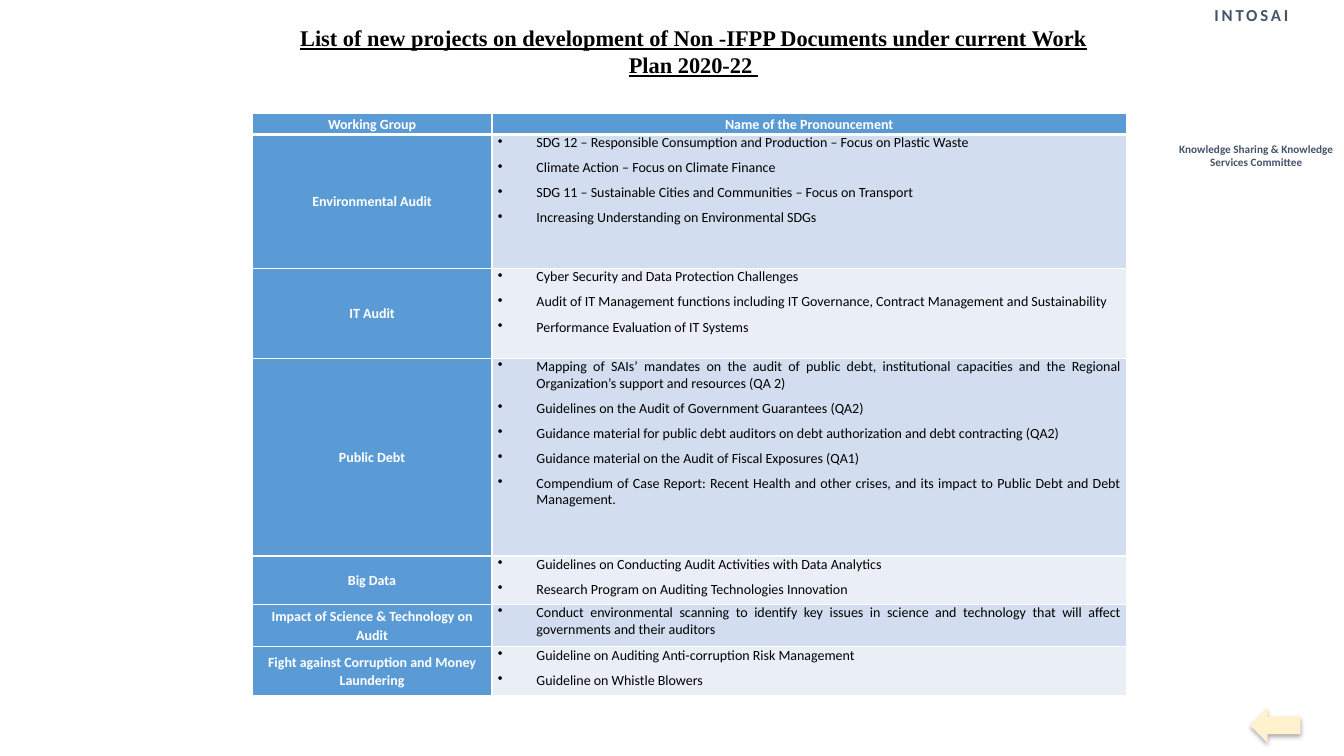
"""Build the slide that lists new projects by working group."""
from dataclasses import dataclass

from pptx import Presentation
from pptx.dml.color import RGBColor
from pptx.enum.shapes import MSO_SHAPE
from pptx.enum.text import MSO_ANCHOR, PP_ALIGN
from pptx.oxml import parse_xml
from pptx.oxml.ns import nsdecls
from pptx.slide import Slide
from pptx.table import _Cell
from pptx.text.text import TextFrame, _Paragraph
from pptx.util import Cm, Pt

ARROW = MSO_SHAPE.LEFT_ARROW
MIDDLE, TOP = MSO_ANCHOR.MIDDLE, MSO_ANCHOR.TOP
CENTER, JUSTIFY = PP_ALIGN.CENTER, PP_ALIGN.JUSTIFY
COLORS = {
    "head": "5B9BD5", "dark": "D2DEEF", "light": "EAEFF7", "white": "FFFFFF",
    "black": "000000", "slate": "44546A", "cream": "FFF2CC",
}
HEADS = ("Working Group", "Name of the Pronouncement")
WIDTHS = (6.05, 15.98)
HEAD_HEIGHT = 0.53


@dataclass
class Group:
    """A working group, its row height in cm and its projects."""
    name: str
    height: float
    items: tuple[str, ...]


@dataclass
class Label:
    """A text box of the page frame, with lengths in cm."""
    text: str
    left: float
    top: float
    width: float
    height: float
    size: int
    spread: int


GROUPS = (
    Group("Environmental Audit", 3.38, (
        "SDG 12 – Responsible Consumption and Production – Focus on Plastic Waste",
        "Climate Action – Focus on Climate Finance",
        "SDG 11 – Sustainable Cities and Communities – Focus on Transport",
        "Increasing Understanding on Environmental SDGs",
    )),
    Group("IT Audit", 2.26, (
        "Cyber Security and Data Protection Challenges",
        "Audit of IT Management functions including IT Governance, "
        "Contract Management and Sustainability",
        "Performance Evaluation of IT Systems",
    )),
    Group("Public Debt", 4.98, (
        "Mapping of SAIs’ mandates on the audit of public debt, institutional "
        "capacities and the Regional Organization’s support and resources (QA 2)",
        "Guidelines on the Audit of Government Guarantees (QA2)",
        "Guidance material for public debt auditors on debt authorization "
        "and debt contracting (QA2)",
        "Guidance material on the Audit of Fiscal Exposures (QA1)",
        "Compendium of Case Report: Recent Health and other crises, "
        "and its impact to Public Debt and Debt Management.",
    )),
    Group("Big Data", 1.22, (
        "Guidelines on Conducting Audit Activities with Data Analytics",
        "Research Program on Auditing Technologies Innovation",
    )),
    Group("Impact of Science & Technology on Audit", 1.07, (
        "Conduct environmental scanning to identify key issues in science and "
        "technology that will affect governments and their auditors",
    )),
    Group("Fight against Corruption and Money Laundering", 1.22, (
        "Guideline on Auditing Anti-corruption Risk Management",
        "Guideline on Whistle Blowers",
    )),
)
LABELS = (
    Label("INTOSAI", 29.51, 0, 4.06, 0.76, 12, 200),
    Label("Knowledge Sharing & Knowledge Services Committee",
          29.03, 3.45, 5.26, 0.94, 8, 0),
)


def style(para: _Paragraph, size: int, color: str, bold: bool = True,
          face: str = "Calibri") -> None:
    """Set the font of a paragraph."""
    font = para.font
    font.name, font.size, font.bold = face, Pt(size), bold
    font.color.rgb = RGBColor.from_string(COLORS[color])


def add_title(slide: Slide) -> None:
    """Place and format the title."""
    title = slide.shapes.title
    title.left, title.top = Cm(7.29), Cm(0.48)
    title.width, title.height = Cm(20.37), Cm(2.39)
    frame = title.text_frame
    frame.text = ("List of new projects on development of Non -IFPP Documents "
                  "under current Work Plan 2020-22 ")
    frame.word_wrap, frame.vertical_anchor = True, TOP
    para = frame.paragraphs[0]
    para.alignment = CENTER
    style(para, 16, "black", face="Times New Roman")
    para.font.underline = True


def add_label(slide: Slide, label: Label) -> None:
    """Draw one centred label."""
    box = slide.shapes.add_textbox(Cm(label.left), Cm(label.top),
                                   Cm(label.width), Cm(label.height))
    frame = box.text_frame
    frame.word_wrap, frame.text = True, label.text
    para = frame.paragraphs[0]
    para.alignment = CENTER
    style(para, label.size, "slate")
    if label.spread:
        para.font._element.set("spc", str(label.spread))


def dress(cell: _Cell, color: str, above: int = 1, below: int = 1) -> None:
    """Set the borders, fill and margins of a cell."""
    props = cell._tc.get_or_add_tcPr()
    for side, width in (("L", 1), ("R", 1), ("T", above), ("B", below)):
        props.append(parse_xml(
            f'<a:ln{side} {nsdecls("a")} w="{Pt(width)}"><a:solidFill>'
            f'<a:srgbClr val="{COLORS["white"]}"/></a:solidFill></a:ln{side}>'))
    cell.fill.solid()
    cell.fill.fore_color.rgb = RGBColor.from_string(COLORS[color])
    cell.margin_left = cell.margin_right = Cm(0.15)
    cell.margin_top = cell.margin_bottom = 0


def fill_name(cell: _Cell, name: str) -> None:
    """Write a centred heading into a cell."""
    cell.text, cell.vertical_anchor = name, MIDDLE
    para = cell.text_frame.paragraphs[0]
    para.alignment, para.line_spacing = CENTER, Pt(13)
    style(para, 10, "white")


def fill_list(frame: TextFrame, items: tuple[str, ...]) -> None:
    """Write the projects as bullets."""
    frame.text = "\n".join(items)
    for para in frame.paragraphs:
        props = para._p.get_or_add_pPr()
        props.set("marL", str(Cm(0.97)))
        props.set("indent", str(Cm(-0.97)))
        props.append(parse_xml(f'<a:buChar {nsdecls("a")} char="•"/>'))
        para.alignment, para.line_spacing = JUSTIFY, 0.98
        para.space_after = Pt(6)
        style(para, 10, "black", bold=False)


def add_grid(slide: Slide) -> None:
    """Draw the table of groups and projects."""
    heights = [HEAD_HEIGHT, *(group.height for group in GROUPS)]
    table = slide.shapes.add_table(
        len(heights), len(WIDTHS), Cm(6.35), Cm(2.86),
        Cm(sum(WIDTHS)), Cm(sum(heights))).table
    for column, width in zip(table.columns, WIDTHS):
        column.width = Cm(width)
    for row, height in zip(table.rows, heights):
        row.height = Cm(height)
    for index, head in enumerate(HEADS):
        cell = table.cell(0, index)
        dress(cell, "head", below=3)
        fill_name(cell, head)
    for index, group in enumerate(GROUPS, 1):
        name, body = table.cell(index, 0), table.cell(index, 1)
        above = 3 if index == 1 else 1
        dress(name, "head", above)
        dress(body, "dark" if index % 2 else "light", above)
        fill_name(name, group.name)
        fill_list(body.text_frame, group.items)


def add_arrow(slide: Slide) -> None:
    """Draw the back arrow with its soft shadow."""
    arrow = slide.shapes.add_shape(ARROW, Cm(31.5), Cm(17.83), Cm(1.27), Cm(0.89))
    arrow.fill.solid()
    arrow.fill.fore_color.rgb = RGBColor.from_string(COLORS["cream"])
    arrow.line.fill.background()
    arrow.shadow.inherit = False
    arrow._element.spPr.effectLst.append(parse_xml(
        f'<a:outerShdw {nsdecls("a")} blurRad="{Pt(3.5)}" dist="{Pt(2.2)}" '
        f'dir="5400000" rotWithShape="0"><a:srgbClr val="{COLORS["black"]}">'
        '<a:alpha val="32000"/></a:srgbClr></a:outerShdw>'))


def main() -> None:
    """Build and save the deck."""
    deck = Presentation()
    deck.slide_width, deck.slide_height = Cm(33.87), Cm(19.05)
    slide = deck.slides.add_slide(deck.slide_layouts[5])
    for label in LABELS:
        add_label(slide, label)
    add_grid(slide)
    add_title(slide)
    add_arrow(slide)
    deck.save("out.pptx")


if __name__ == "__main__":
    main()
